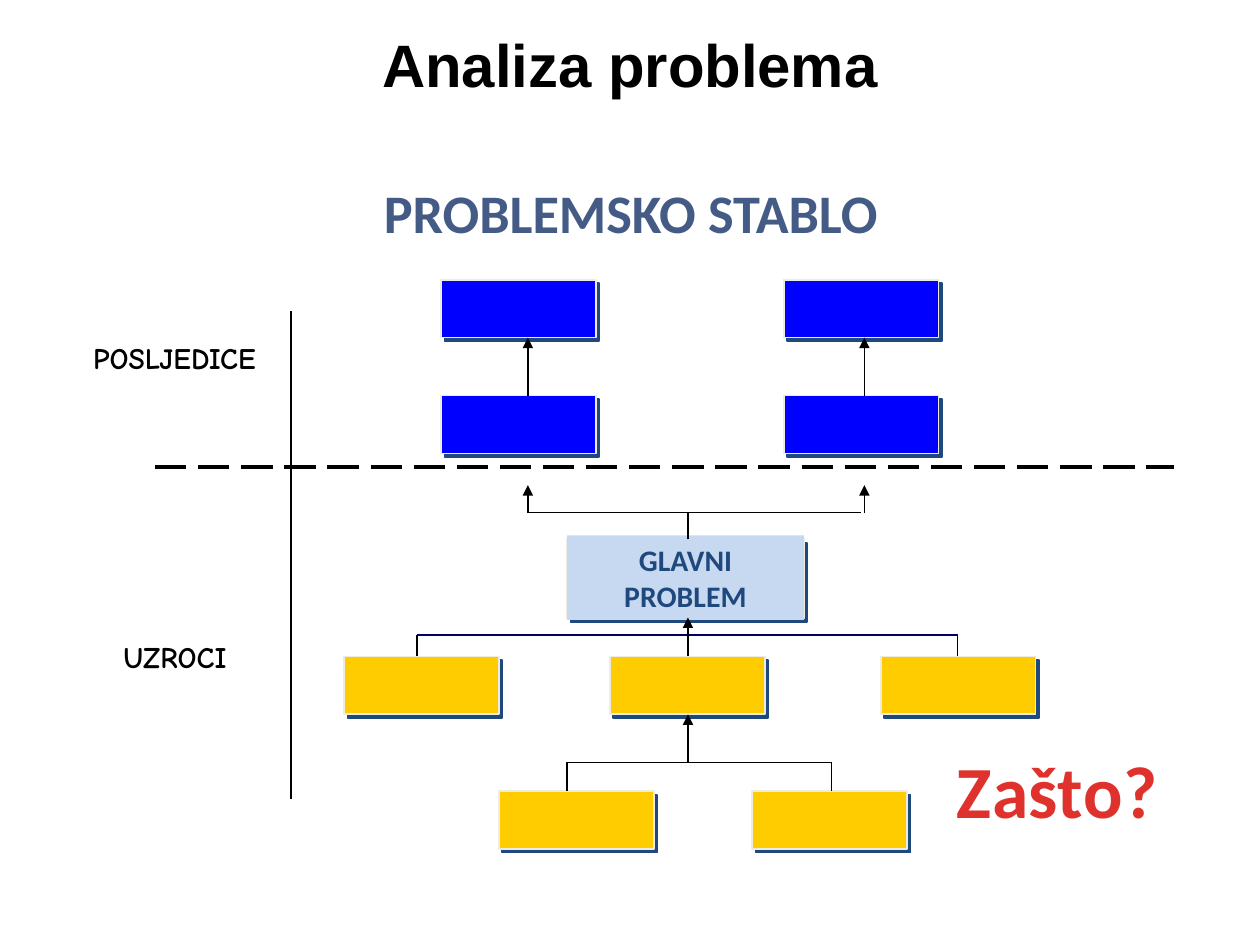
from lxml.etree import SubElement as Sub
from pptx import Presentation
from pptx.dml.color import RGBColor
from pptx.enum.dml import MSO_LINE as Dash
from pptx.enum.shapes import MSO_CONNECTOR as Conn, MSO_SHAPE as Kind
from pptx.enum.text import MSO_ANCHOR as Anchor, PP_ALIGN as Align
from pptx.oxml.ns import qn
from pptx.util import Inches, Pt

BLACK = RGBColor(0x00, 0x00, 0x00)
NAVY = RGBColor(0x00, 0x00, 0x66)
BLUE = RGBColor(0x00, 0x00, 0xFF)
GOLD = RGBColor(0xFF, 0xCC, 0x00)
CREAM = RGBColor(0xEE, 0xEC, 0xE1)
PALE = RGBColor(0xC6, 0xD9, 0xF1)
DEEP = RGBColor(0x1F, 0x49, 0x7D)
PURPLE = RGBColor(0x80, 0x00, 0x80)
SLATE = RGBColor(0x44, 0x5B, 0x86)
RED = RGBColor(0xE0, 0x32, 0x2D)

BOX_W, BOX_H = 1.23, 0.46
LEFT, MID, RIGHT = 4.19, 5.46, 6.86


def set_text(frame, text, font, size, color):
    frame.text = text
    para = frame.paragraphs[0]
    para.alignment = Align.CENTER
    para.font.name = font
    para.font.size = Pt(size)
    para.font.bold = True
    para.font.color.rgb = color


def add_title(slide, text):
    title = slide.shapes.title
    title.left, title.top = Inches(0), Inches(0.16)
    title.width, title.height = Inches(10), Inches(0.69)
    title.text_frame.vertical_anchor = Anchor.MIDDLE
    set_text(title.text_frame, text, "Arial", 34.2, BLACK)


def add_label(slide, x, y, w, h, text, font, size, color, pad=(0.1, 0.05)):
    frame = slide.shapes.add_textbox(
        Inches(x), Inches(y), Inches(w), Inches(h)).text_frame
    frame.word_wrap = False
    frame.margin_left = frame.margin_right = Inches(pad[0])
    frame.margin_top = frame.margin_bottom = Inches(pad[1])
    set_text(frame, text, font, size, color)
    return frame


def add_rect(slide, x, y, w, h, color):
    rect = slide.shapes.add_shape(
        Kind.RECTANGLE, Inches(x), Inches(y), Inches(w), Inches(h))
    rect.shadow.inherit = False
    rect.fill.solid()
    rect.fill.fore_color.rgb = color
    rect.line.fill.background()
    return rect


def add_box(slide, x, y, color, w=BOX_W, h=BOX_H):
    box = add_rect(slide, x, y, w, h, color)
    box.line.color.rgb = CREAM
    box.line.width = Pt(1)
    effects = box._element.spPr.find(qn("a:effectLst"))
    shade = Sub(effects, qn("a:outerShdw"), dist=str(Pt(2.8)),
                dir="2700000", algn="ctr", rotWithShape="0")
    Sub(shade, qn("a:srgbClr"), val=str(DEEP))


def add_line(slide, x1, y1, x2, y2, color=BLACK, width=0.75, dash=None):
    link = slide.shapes.add_connector(
        Conn.STRAIGHT, Inches(x1), Inches(y1), Inches(x2), Inches(y2))
    link.line.color.rgb = color
    link.line.width = Pt(width)
    if dash:
        link.line.dash_style = dash
    Sub(link._element.spPr, qn("a:effectLst"))
    return link


def add_arrow(slide, x, start, end):
    link = add_line(slide, x, start, x, end)
    Sub(link.line._get_or_add_ln(), qn("a:tailEnd"), type="triangle")


def add_main(slide):
    add_box(slide, 4.5, 4.28, PURPLE, 1.88, 0.63)
    rect = add_rect(slide, 4.5, 4.25, 1.88, 0.67, PALE)
    rect.text_frame.word_wrap = True
    set_text(rect.text_frame, "GLAVNI PROBLEM", "Calibri", 17, DEEP)


def add_tree(slide):
    add_line(slide, 3.31, 5.04, 7.6, 5.04, NAVY, 1)
    add_main(slide)
    for x in (3.5, 6.22):
        for y in (2.22, 3.14):
            add_box(slide, x, y, BLUE)
    for y, row in ((5.21, (2.73, 4.84, 6.99)), (6.28, (3.96, 5.97))):
        for x in row:
            add_box(slide, x, y, GOLD)

    add_line(slide, 4.5, 6.05, 6.6, 6.05)
    for y, end, row in ((6.05, 6.28, (4.5, 6.6)), (5.04, 5.21, (3.31, 7.6))):
        for x in row:
            add_line(slide, x, y, x, end)
    add_line(slide, LEFT, 4.07, 6.83, 4.07)
    add_line(slide, MID, 4.28, MID, 4.07)

    for x in (LEFT, RIGHT):
        add_arrow(slide, x, 3.14, 2.68)
        add_arrow(slide, x, 4.07, 3.85)
    add_arrow(slide, MID, 5.21, 4.9)
    add_arrow(slide, MID, 6.05, 5.67)


def main():
    deck = Presentation()
    deck.slide_width, deck.slide_height = Inches(10), Inches(7.5)
    slide = deck.slides.add_slide(deck.slide_layouts[5])

    add_title(slide, "Analiza problema")
    add_line(slide, 1.23, 3.71, 9.32, 3.71, width=2.25, dash=Dash.LONG_DASH)
    add_tree(slide)
    add_line(slide, 2.31, 2.47, 2.31, 6.34)

    add_label(slide, 0.53, 2.65, 1.71, 0.38, "POSLJEDICE",
              "Comic Neue", 17, BLACK)
    add_label(slide, 0.81, 5.02, 1.16, 0.38, "UZROCI",
              "Comic Neue", 17, BLACK)
    why = add_label(slide, 7.51, 5.87, 1.76, 0.78, "Zašto?",
                    "Calibri", 42, RED, (0.07, 0.04))
    why.paragraphs[0].runs[0].font._element.set("spc", "30")
    add_label(slide, 2.95, 1.38, 4.11, 0.59, "PROBLEMSKO STABLO",
              "Calibri", 31, SLATE, (0.07, 0.04))

    deck.save("out.pptx")


if __name__ == "__main__":
    main()
